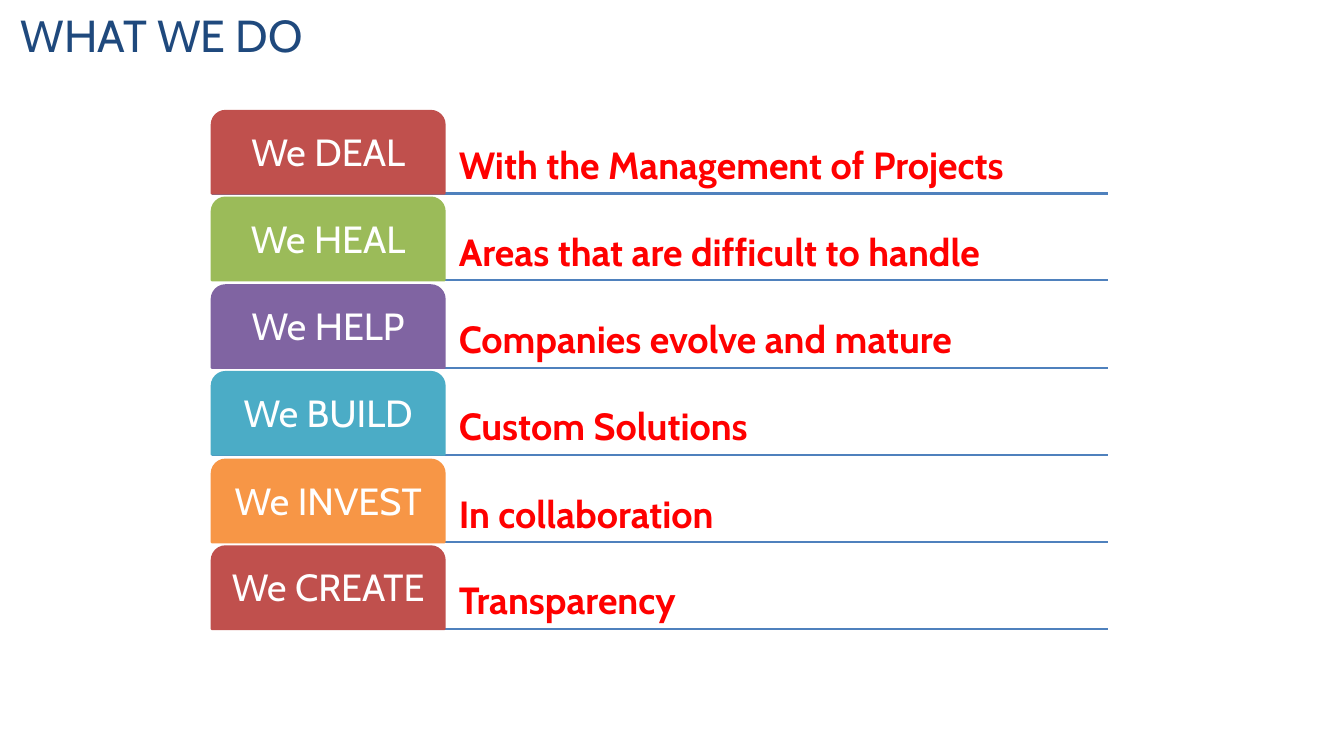
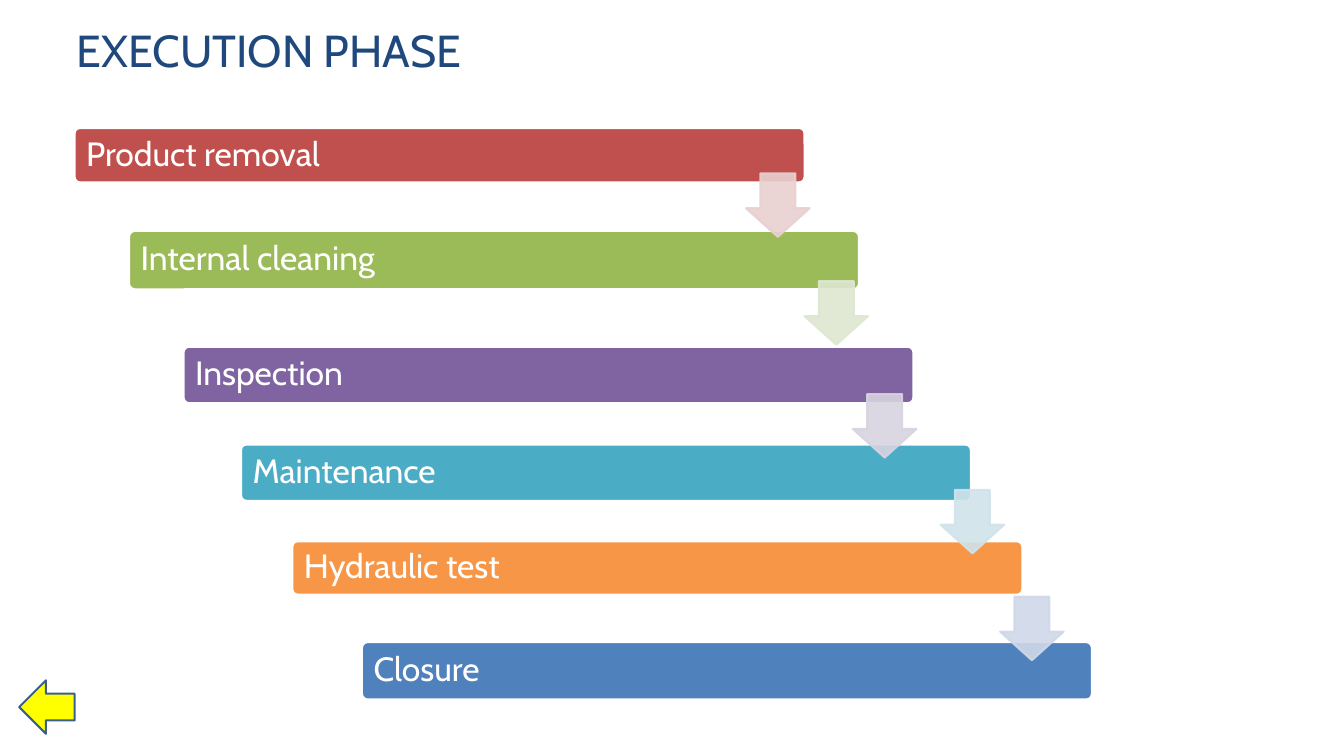
from lxml import etree
from pptx import Presentation
from pptx import util as u
from pptx.dml.color import RGBColor
from pptx.enum import shapes, text
from pptx.oxml.ns import qn

PX = 9144  # EMU per px, 100 px to the inch
FONT = "Cabin"

NAVY = RGBColor(0x1F, 0x49, 0x7D)
WHITE = RGBColor(0xFF, 0xFF, 0xFF)
BRIGHT_RED = RGBColor(0xFF, 0x00, 0x00)
YELLOW = RGBColor(0xFF, 0xFF, 0x00)
BLUE = RGBColor(0x4F, 0x81, 0xBD)
DARK_BLUE = RGBColor(0x3A, 0x5F, 0x8C)
RED = RGBColor(0xC0, 0x50, 0x4D)
GREEN = RGBColor(0x9B, 0xBB, 0x59)
PURPLE = RGBColor(0x80, 0x64, 0xA2)
TEAL = RGBColor(0x4B, 0xAC, 0xC6)
ORANGE = RGBColor(0xF7, 0x96, 0x46)
PALE_RED = RGBColor(0xE8, 0xD0, 0xD0)
PALE_GREEN = RGBColor(0xDE, 0xE7, 0xD1)
PALE_PURPLE = RGBColor(0xD8, 0xD3, 0xE0)
PALE_TEAL = RGBColor(0xD0, 0xE3, 0xEA)
PALE_BLUE = RGBColor(0xD0, 0xD8, 0xE8)

SHAPE = shapes.MSO_SHAPE
ANCHOR = text.MSO_ANCHOR
ALIGN = text.PP_ALIGN

# Slide 1: label, description, colour
OFFERS = [
    ("We DEAL", "With the Management of Projects", RED),
    ("We HEAL", "Areas that are difficult to handle", GREEN),
    ("We HELP", "Companies evolve and mature", PURPLE),
    ("We BUILD", "Custom Solutions", TEAL),
    ("We INVEST", "In collaboration", ORANGE),
    ("We CREATE", "Transparency", RED),
]

# Slide 2: label, left, top, height, colour
STEPS = [
    ("Product removal", 74, 127, 54, RED),
    ("Internal cleaning", 128, 229, 58, GREEN),
    ("Inspection", 182, 344, 56, PURPLE),
    ("Maintenance", 239, 441, 56, TEAL),
    ("Hydraulic test", 290, 537, 53, ORANGE),
    ("Closure", 359, 637, 57, BLUE),
]

# Slide 2: left, top, colour of the arrow after each step
STEP_ARROWS = [
    (740, 172, PALE_RED),
    (798, 279, PALE_GREEN),
    (846, 391, PALE_PURPLE),
    (933, 486, PALE_TEAL),
    (992, 592, PALE_BLUE),
]


def box(*lengths):
    return [length * PX for length in lengths]


def put_text(sp, words, size, color, insets, anchor=ANCHOR.MIDDLE,
             align=ALIGN.LEFT, bold=False, spacing=0.9):
    tf = sp.text_frame
    tf.word_wrap = True
    tf.vertical_anchor = anchor
    tf.margin_left, tf.margin_top, tf.margin_right, tf.margin_bottom = box(*insets)
    p = tf.paragraphs[0]
    p.text = words
    p.alignment = align
    p.line_spacing = spacing
    p.font.name = FONT
    p.font.size = u.Pt(size)
    p.font.bold = bold
    p.font.color.rgb = color


def add_text(s, at, words, *style, **options):
    put_text(s.shapes.add_textbox(*box(*at)), words, *style, **options)


def add_title(s, left, top, height, words):
    add_text(s, (left, top, 940, height), words, 32, NAVY, (10, 5, 10, 5),
             anchor=ANCHOR.TOP, spacing=1.0)


def add_block(s, kind, at, fill, line, adjustments=()):
    sp = s.shapes.add_shape(kind, *box(*at))
    sp.shadow.inherit = False
    sp.fill.solid()
    sp.fill.fore_color.rgb = fill
    sp.line.color.rgb = line
    sp.line.width = u.Pt(1.5)
    for i, value in enumerate(adjustments):
        sp.adjustments[i] = value
    return sp


def add_rule(s, left, right, y):
    line = s.shapes.add_connector(shapes.MSO_CONNECTOR.STRAIGHT, *box(left, y, right, y))
    line.line.color.rgb = BLUE
    line.line.width = u.Pt(1.5)
    etree.SubElement(line._element.spPr, qn("a:effectLst"))


def add_offer(s, top, label, description, color):
    left, split, right, height = 210, 441, 1099, 82
    add_rule(s, left, right, top + height)
    add_text(s, (split, top, right - split, height), description, 27, BRIGHT_RED,
             (14, 6, 6, 6), anchor=ANCHOR.BOTTOM, bold=True)
    tab = add_block(s, SHAPE.ROUND_2_SAME_RECTANGLE, (left, top, split - left, height),
                    color, color)
    put_text(tab, label, 27, WHITE, (6, 6, 6, 6), align=ALIGN.CENTER)


def add_step(s, label, left, top, height, color):
    bar = add_block(s, SHAPE.ROUNDED_RECTANGLE, (left, top, 724, height),
                    color, WHITE, [0.1])
    put_text(bar, label, 24, WHITE, (10, 0, 10, 0))


def add_step_arrow(s, left, top, color):
    arrow = add_block(s, SHAPE.DOWN_ARROW, (left, top, 63, 63), color, color, [0.55, 0.45])
    # 90 % opacity on fill and outline
    for clr in arrow._element.spPr.iter(qn("a:srgbClr")):
        etree.SubElement(clr, qn("a:alpha"), val="90000")


def main():
    prs = Presentation()
    prs.slide_width, prs.slide_height = box(1333, 750)
    blank = prs.slide_layouts[6]

    # What we do
    s = prs.slides.add_slide(blank)
    add_title(s, 11, 3, 91, "WHAT WE DO")
    for i, offer in enumerate(OFFERS):
        add_offer(s, 110 + i * 173 // 2, *offer)

    # Execution phase
    s = prs.slides.add_slide(blank)
    add_title(s, 66, 18, 59, "EXECUTION PHASE")
    for step in STEPS:
        add_step(s, *step)
    for arrow in STEP_ARROWS:
        add_step_arrow(s, *arrow)
    add_block(s, SHAPE.LEFT_ARROW, (19, 675, 55, 53), YELLOW, DARK_BLUE)

    prs.save("out.pptx")


if __name__ == "__main__":
    main()
